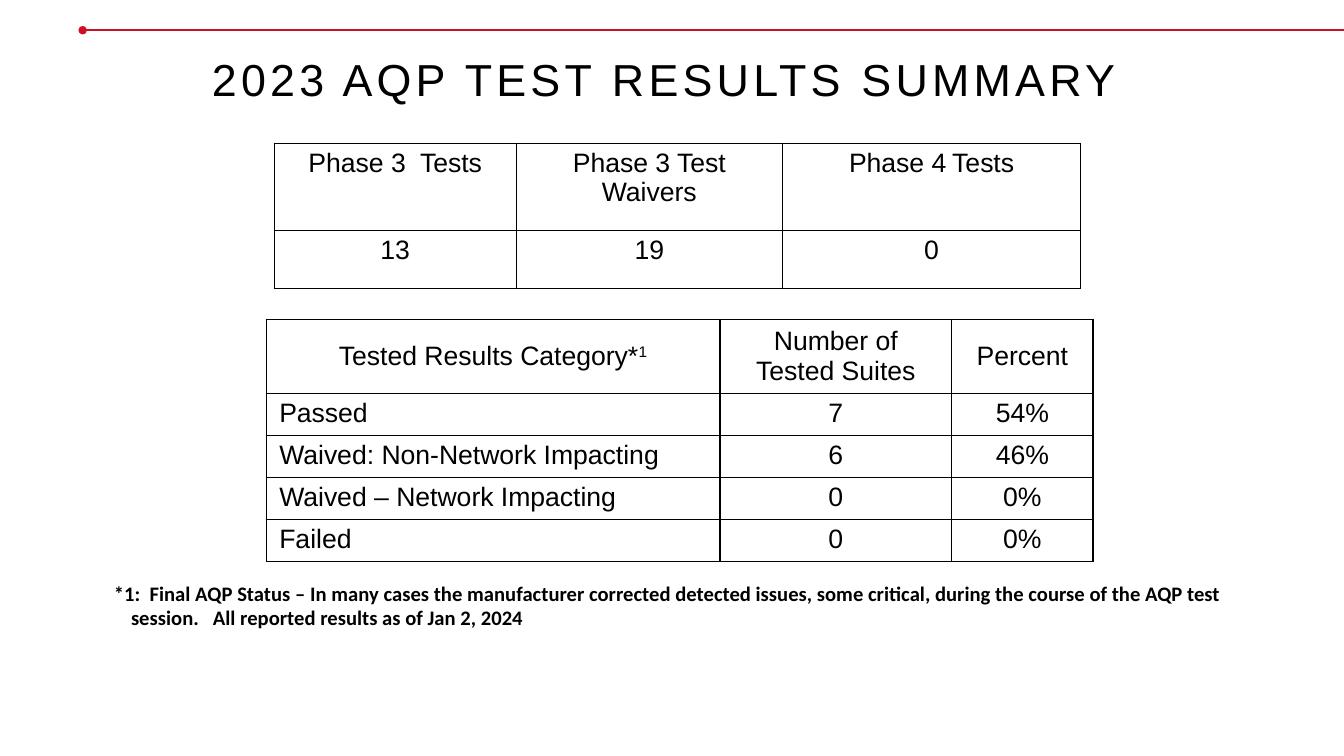
from lxml.etree import SubElement
from pptx import Presentation
from pptx.dml.color import RGBColor
from pptx.enum.shapes import MSO_CONNECTOR as Connector
from pptx.enum.text import MSO_ANCHOR as Anchor, PP_ALIGN as Align
from pptx.oxml.ns import qn
from pptx.util import Inches, Pt

COLORS = {"text": "000000", "rule": "CE1126", "border": "000000"}
TABLE_SIZE = 19

PHASE_ROWS = [
    ["Phase 3  Tests", "Phase 3 Test Waivers", [("Phase 4", {}), (" ", {"sz": 1500}), ("Tests", {})]],
    ["13", "19", "0"],
]
RESULT_ROWS = [
    [[("Tested Results Category*", {}), ("1", {"baseline": 30000})], "Number of Tested Suites", "Percent"],
    ["Passed", "7", "54%"],
    ["Waived: Non-Network Impacting", "6", "46%"],
    ["Waived – Network Impacting", "0", "0%"],
    ["Failed", "0", "0%"],
]
FOOTNOTE = (
    "*1:  Final AQP Status – In many cases the manufacturer corrected detected issues, "
    "some critical, during the course of the AQP test session.   "
    "All reported results as of Jan 2, 2024"
)


def color(name):
    return RGBColor.from_string(COLORS[name])


def write(paragraph, content, size, font_name="Arial", bold=False):
    runs = [(content, {})] if isinstance(content, str) else content
    for text, attributes in runs:
        run = paragraph.add_run()
        run.text = text
        for key, value in attributes.items():
            run._r.get_or_add_rPr().set(key, str(value))
    font = paragraph.font
    font.name, font.size, font.bold = font_name, Pt(size), bold
    font.color.rgb = color("text")


def add_text(slide, left, top, width, height):
    frame = slide.shapes.add_textbox(*map(Inches, (left, top, width, height))).text_frame
    frame.word_wrap = True
    frame.margin_left = frame.margin_right = Inches(0.13)
    frame.margin_top = frame.margin_bottom = Inches(0.07)
    return frame.paragraphs[0]


def add_title(slide):
    paragraph = add_text(slide, 0, 0.55, 13.33, 0.84)
    paragraph.alignment = Align.CENTER
    paragraph.line_spacing = 0.8
    write(paragraph, [("2023 AQP TEST RESULTS SUMMARY ", {"spc": 300})], 32)


def add_footnote(slide):
    paragraph = add_text(slide, 1, 5.69, 11.43, 0.66)
    properties = paragraph._p.get_or_add_pPr()
    properties.set("marL", str(Inches(0.17)))
    properties.set("indent", str(Inches(-0.17)))
    write(paragraph, FOOTNOTE, 14.7, "Calibri", True)


def add_rule(slide):
    rule = slide.shapes.add_connector(
        Connector.STRAIGHT, Inches(0.82), Inches(0.3), Inches(13.33), Inches(0.3))
    rule.line.color.rgb = color("rule")
    rule.line.width = Pt(1.5)
    SubElement(rule.line._get_or_add_ln(), qn("a:headEnd"), type="oval")
    SubElement(rule._element.spPr, qn("a:effectLst"))


def add_borders(cell):
    properties = cell._tc.get_or_add_tcPr()
    for position, side in enumerate(("lnL", "lnR", "lnT", "lnB")):
        line = SubElement(properties, qn(f"a:{side}"), w=str(Pt(1)))
        fill = SubElement(line, qn("a:solidFill"))
        SubElement(fill, qn("a:srgbClr"), val=COLORS["border"])
        properties.insert(position, line)


def add_grid(slide, left, top, widths, heights, rows, header_anchor, first_column):
    table = slide.shapes.add_table(
        len(rows), len(widths), Inches(left), Inches(top),
        Inches(sum(widths)), Inches(sum(heights))).table
    table.first_row = table.horz_banding = False
    for column, width in zip(table.columns, widths):
        column.width = Inches(width)
    for row_index, (row, height) in enumerate(zip(rows, heights)):
        table.rows[row_index].height = Inches(height)
        for column_index, content in enumerate(row):
            cell = table.cell(row_index, column_index)
            cell.margin_left = cell.margin_right = Inches(0.13)
            cell.margin_top = cell.margin_bottom = Inches(0.05)
            cell.vertical_anchor = Anchor.TOP if row_index else header_anchor
            cell.fill.background()
            add_borders(cell)
            paragraph = cell.text_frame.paragraphs[0]
            is_label = row_index > 0 and column_index == 0
            paragraph.alignment = first_column if is_label else Align.CENTER
            write(paragraph, content, TABLE_SIZE)


def main():
    presentation = Presentation()
    presentation.slide_width = Inches(13.33)
    presentation.slide_height = Inches(7.5)
    slide = presentation.slides.add_slide(presentation.slide_layouts[6])
    add_rule(slide)
    add_title(slide)
    add_grid(slide, 2.64, 3.17, [4.5, 2.3, 1.4], [0.72] + [0.41] * 4,
             RESULT_ROWS, Anchor.MIDDLE, Align.LEFT)
    add_grid(slide, 2.72, 1.42, [2.4, 2.64, 2.96], [0.87, 0.57],
             PHASE_ROWS, Anchor.TOP, Align.CENTER)
    add_footnote(slide)
    presentation.save("out.pptx")


if __name__ == "__main__":
    main()
